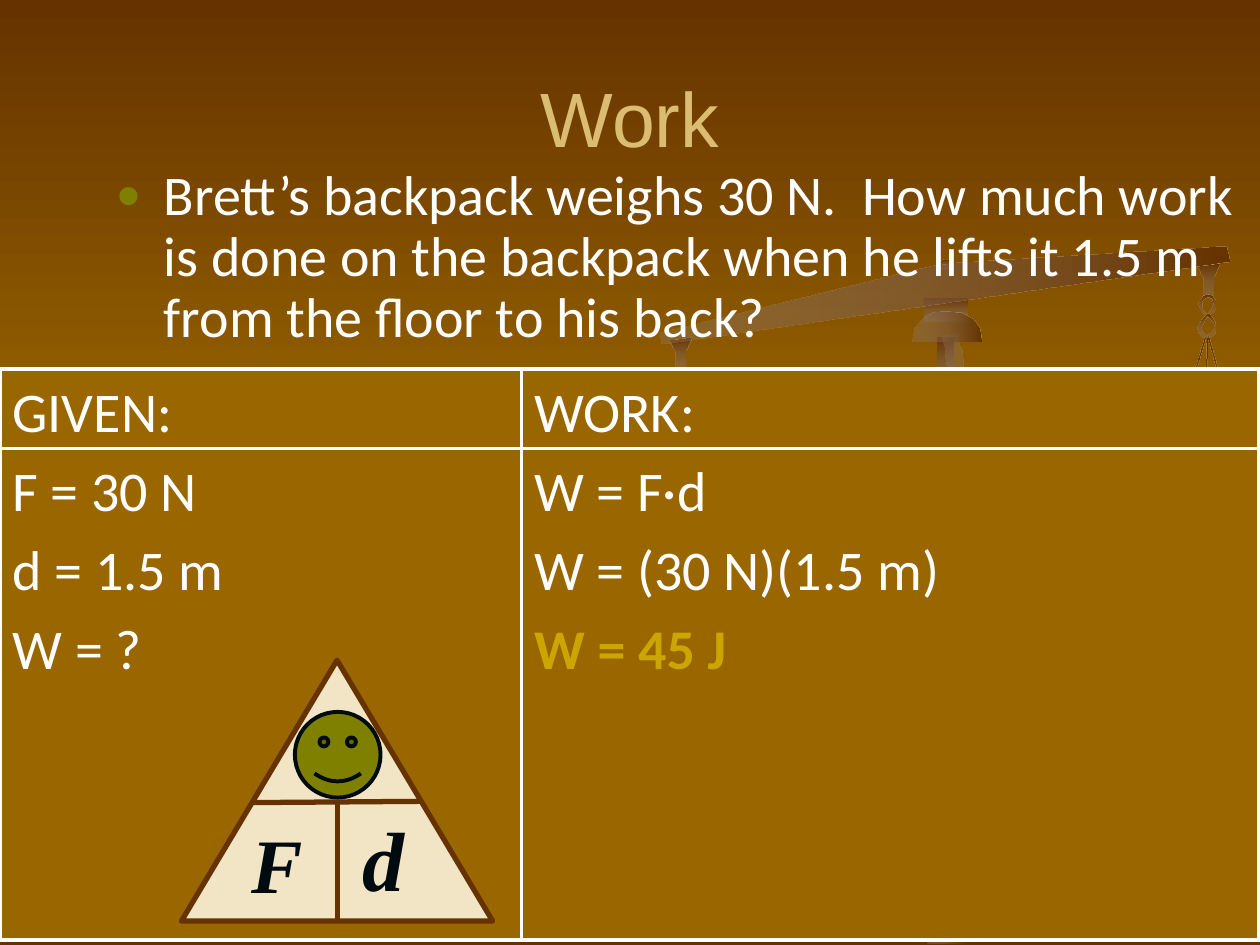
from copy import deepcopy
from lxml import etree
from pptx import Presentation
from pptx.dml.color import RGBColor
from pptx.enum.shapes import MSO_CONNECTOR, MSO_SHAPE
from pptx.enum.text import MSO_ANCHOR, MSO_AUTO_SIZE, PP_ALIGN
from pptx.oxml.ns import qn
from pptx.util import Pt

PX = 9144
RECT, OVAL = MSO_SHAPE.RECTANGLE, MSO_SHAPE.OVAL
TRIANGLE, SMILEY = MSO_SHAPE.ISOSCELES_TRIANGLE, MSO_SHAPE.SMILEY_FACE
STRAIGHT = MSO_CONNECTOR.STRAIGHT
TOP, MIDDLE = MSO_ANCHOR.TOP, MSO_ANCHOR.MIDDLE
CENTER, LEFT = PP_ALIGN.CENTER, PP_ALIGN.LEFT
NO_FIT = MSO_AUTO_SIZE.NONE

C = {"brown": "663300", "ochre": "996600", "metal": "937F79", "title": "DBBD71",
     "white": "FFFFFF", "olive": "808000", "answer": "CCA500", "cream": "F1E5C6",
     "ink": "000B10"}


def rgb(name):
    return RGBColor.from_string(C[name])


def px(*values):
    return [round(v * PX) for v in values]


def sub(parent, tag, **attrs):
    return etree.SubElement(parent, qn(tag), attrs)


def write(tf, lines, size=32, font="Calibri", color="white", bold=False, italic=False,
          align=LEFT, gap=0, spacing=1.0):
    for i, line in enumerate(lines):
        p = tf.paragraphs[0] if i == 0 else tf.add_paragraph()
        p.alignment, p.line_spacing = align, spacing
        p.space_before = Pt(gap if i else 0)
        r = p.add_run()
        r.text = line
        r.font.size, r.font.name = Pt(size), font
        r.font.bold, r.font.italic = bold, italic
        r.font.color.rgb = rgb(color)


def place(sp, box):
    sp.left, sp.top, sp.width, sp.height = px(*box)


def gradient(fill, colors, angle):
    fill.gradient()
    fill.gradient_angle = -angle % 360
    for stop, color in zip(fill.gradient_stops, colors):
        stop.color.rgb = rgb(color)


def metal(sp, colors=("brown", "metal"), angle=90):
    sp.shadow.inherit = False
    sp.line.fill.background()
    gradient(sp.fill, colors, angle)
    for clr in sp._element.spPr.iter(qn("a:srgbClr")):
        if clr.get("val") == C["metal"]:
            sub(clr, "a:alpha", val="30000")


def shape(shapes, kind, box, fill, line, width):
    sp = shapes.add_shape(kind, *px(*box))
    sp.shadow.inherit = False
    sp.fill.solid()
    sp.fill.fore_color.rgb = rgb(fill)
    sp.line.color.rgb = rgb(line)
    sp.line.width = Pt(width)
    return sp


def rule(shapes, ends, color, width):
    ln = shapes.add_connector(STRAIGHT, *px(*ends))
    ln.line.color.rgb = rgb(color)
    ln.line.width = Pt(width)
    sub(ln._element.spPr, "a:effectLst")


def outline(shapes, x, y, *contours):
    fb = shapes.build_freeform(*contours[0][0], scale=PX)
    for i, points in enumerate(contours):
        if i:
            fb.move_to(*points[0])
        fb.add_line_segments(points[1:], close=True)
    return fb.convert_to_shape(*px(x, y))


def background(s):
    fill = s.background.fill
    fill.gradient()
    stops = s._element.find(".//" + qn("a:gsLst"))
    stops.append(deepcopy(stops[-1]))
    gradient(fill, ("brown", "ochre", "brown"), 90)
    for stop, position in zip(fill.gradient_stops, (0, 0.5, 1)):
        stop.position = position


def balance(s, x, y):
    group = s.shapes.add_group_shape()
    g = group.shapes
    s.shapes._spTree.remove(group._element)
    s.shapes._spTree.insert(2, group._element)

    for kind, box, turn in ((RECT, (210, 41, 34, 18), 0),
                            (OVAL, (222, 10, 8, 8), 0),
                            (RECT, (380, 64, 1, 360), 16.6),
                            (RECT, (429, 70, 1, 347), 1.5),
                            (RECT, (455, 68, 1, 153), 344.6)):
        sp = g.add_shape(kind, *px(x + box[0], y + box[1], *box[2:]))
        sp.rotation = turn
        metal(sp)

    hook = [(18, 0), (0, 2), (5, 12), (5, 26), (13, 26), (13, 11)]
    for dx, dy in ((7, 72), (426, 13)):
        metal(outline(g, x + dx, y + dy, hook))

    upper = ([(7, 17), (11, 14), (14, 10), (14, 5), (11, 1), (7, 0), (4, 1), (1, 5),
              (0, 7), (2, 12), (5, 15)],
             [(8, 2), (11, 3), (12, 7), (11, 10), (7, 15), (5, 13), (3, 10), (3, 5), (5, 3)])
    lower = ([(1, 15), (5, 19), (10, 19), (14, 16), (15, 11), (14, 6), (10, 1), (8, 0),
              (4, 4), (0, 11)],
             [(3, 11), (6, 5), (8, 2), (13, 7), (14, 11), (11, 15), (7, 16), (4, 14)])
    metal(outline(g, x + 427, y + 38, *upper))
    metal(outline(g, x + 426, y + 53, *lower))

    beam = [(449, 0), (452, 12), (1, 77), (0, 68), (213, 16), (235, 13)]
    metal(outline(g, x, y, beam), ("metal", "brown"), 0)
    post = g.add_shape(RECT, *px(x + 212, y + 112, 30, 441))
    metal(post, ("metal", "brown"), 0)
    metal(g.add_shape(RECT, *px(x + 220, y + 72, 13, 42)))
    pointer = [(43, 274), (2, 15), (2, 11), (0, 3), (12, 0), (13, 9), (15, 12)]
    metal(outline(g, x + 224, y + 69, pointer), ("metal", "brown"), 45)
    cap = [(28, 0), (39, 1), (48, 6), (53, 13), (55, 24), (0, 24), (2, 13), (8, 6), (16, 1)]
    metal(outline(g, x + 200, y + 51, cap), ("metal", "brown"), 0)


def title(s, box):
    sp = s.shapes.title
    place(sp, box)
    sp.text_frame.vertical_anchor = MIDDLE
    write(sp.text_frame, ["Work"], size=44, font="Arial", color="title", align=CENTER)


def question(s, box):
    sp = s.placeholders[1]
    place(sp, box)
    tf = sp.text_frame
    tf.vertical_anchor, tf.auto_size = TOP, NO_FIT
    write(tf, ["Brett’s backpack weighs 30 N.  How much work is done on the backpack "
               "when he lifts it 1.5 m from the floor to his back?"], spacing=0.9)
    pPr = tf.paragraphs[0]._p.get_or_add_pPr()
    pPr.set("marL", str(38 * PX))
    pPr.set("indent", str(-38 * PX))
    sub(sub(pPr, "a:buClr"), "a:srgbClr", val=C["olive"])
    sub(pPr, "a:buSzPct", val="75000")
    sub(pPr, "a:buFont", typeface="Arial")
    sub(pPr, "a:buChar", char="●")


def border(cell, width):
    tcPr = cell._tc.get_or_add_tcPr()
    for i, side in enumerate(("a:lnL", "a:lnR", "a:lnT", "a:lnB")):
        ln = etree.Element(qn(side), w=str(Pt(width)))
        sub(sub(ln, "a:solidFill"), "a:srgbClr", val=C["white"])
        tcPr.insert(i, ln)


def solution(s, box):
    table = s.shapes.add_table(2, 2, *px(*box)).table
    split, head = 414, 63
    for col, width in zip(table.columns, px(split, box[2] - split)):
        col.width = width
    for row, height in zip(table.rows, px(head, box[3] - head)):
        row.height = height
    rows = ((["GIVEN:"], ["WORK:"]),
            (["F = 30 N", "d = 1.5 m", "W = ?"],
             ["W = F·d", "W = (30 N)(1.5 m)", "W = 45 J"]))
    for i, row in enumerate(rows):
        for j, lines in enumerate(row):
            cell = table.cell(i, j)
            cell.fill.solid()
            cell.fill.fore_color.rgb = rgb("ochre")
            cell.margin_left, cell.margin_top, cell.margin_bottom = px(10, 8, 0)
            write(cell.text_frame, lines, gap=6)
            border(cell, 2.25)
    answer = table.cell(1, 1).text_frame.paragraphs[-1].runs[0].font
    answer.bold, answer.color.rgb = True, rgb("answer")


def formula_triangle(s, box):
    x, y, w, h = box
    g = s.shapes.add_group_shape().shapes
    shape(g, TRIANGLE, box, "cream", "brown", 3)
    rule(g, (x + 57, y + 113, x + 190, y + 112), "brown", 3)
    rule(g, (x + 124, y + 113, x + 124, y + h - 1), "brown", 3)
    for letter, size, dx, dy, width, height in (("F", 44, 46, 119, 61, 83),
                                                ("d", 48, 134, 112, 53, 90)):
        tf = g.add_textbox(*px(x + dx, y + dy, width, height)).text_frame
        tf.word_wrap = False
        write(tf, [letter], size=size, font="Times New Roman", color="ink",
              bold=True, italic=True)
    shape(s.shapes, SMILEY, (x + 90, y + 41, 68, 68), "olive", "ink", 2.25)


def main():
    prs = Presentation()
    prs.slide_width, prs.slide_height = px(1000, 750)
    s = prs.slides.add_slide(prs.slide_layouts[1])
    background(s)
    balance(s, 524, 196)
    title(s, (50, 30, 900, 125))
    question(s, (82, 128, 918, 172))
    solution(s, (0, 293, 999, 453))
    formula_triangle(s, (144, 524, 247, 207))
    prs.save("out.pptx")


if __name__ == "__main__":
    main()
